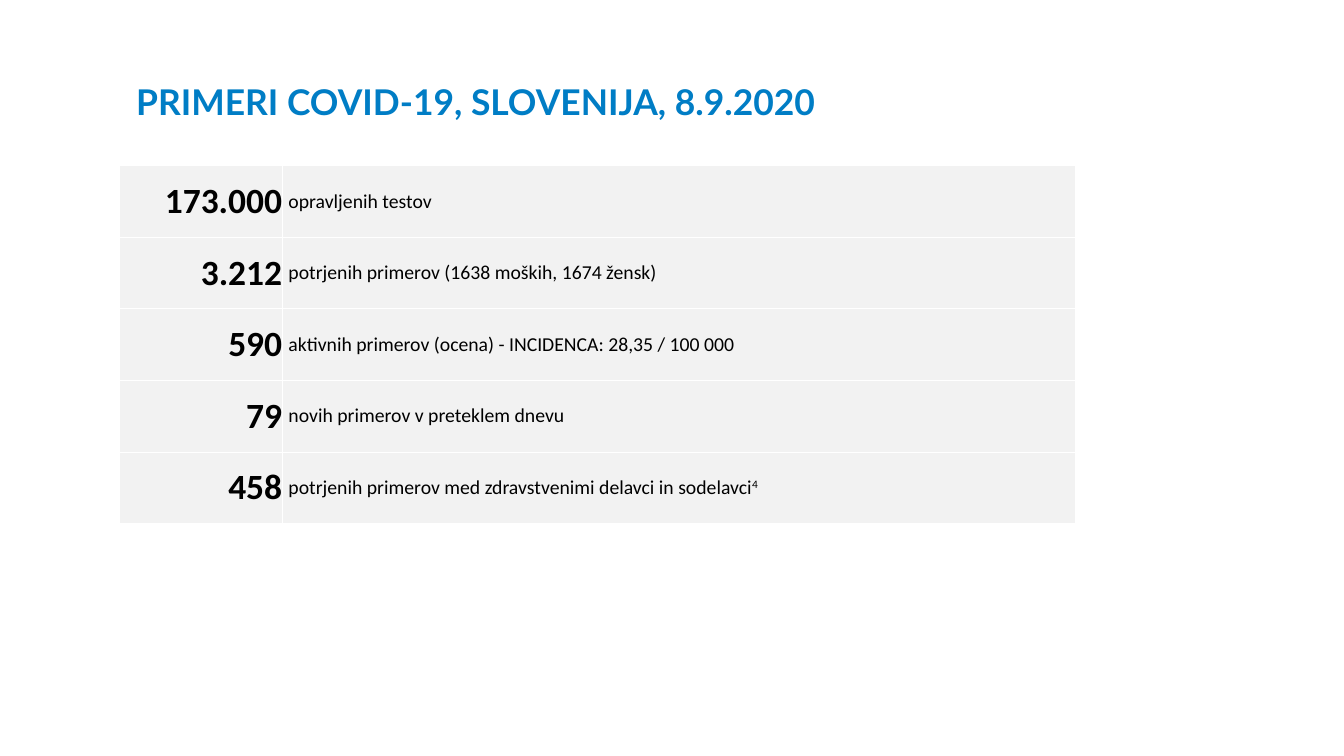
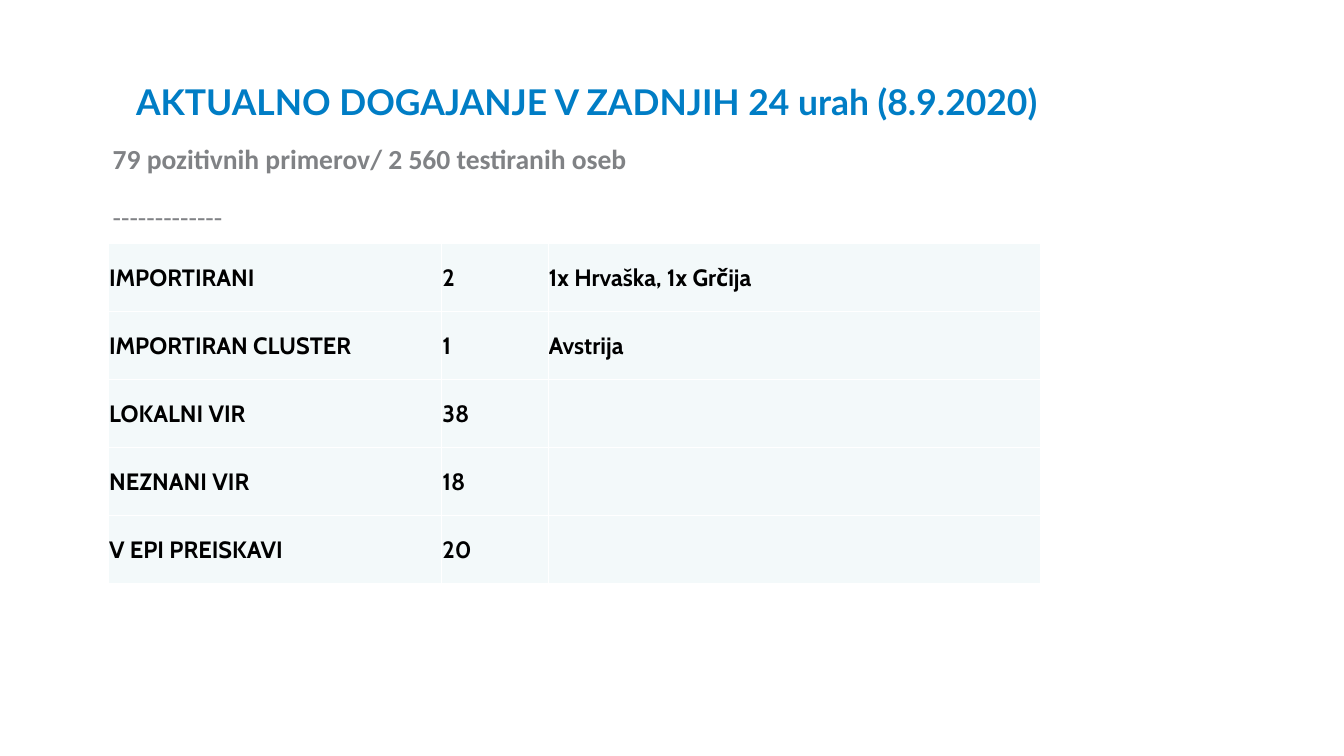
from lxml import etree
from pptx import Presentation
from pptx.dml.color import RGBColor
from pptx.enum.text import MSO_ANCHOR, MSO_AUTO_SIZE, PP_ALIGN
from pptx.oxml import parse_xml
from pptx.oxml.ns import nsdecls, qn
from pptx.util import Inches, Pt

BLUE, GREY, BLACK, WHITE = "007DC5", "808285", "000000", "FFFFFF"
TITLE_FONT = {"name": "Lato", "size": Pt(36), "bold": True}
SUMMARY_FONT = {"name": "Calibri", "size": Pt(28), "bold": True}
FRAME_FORMAT = {
    "margin_left": Inches(0.06), "margin_right": Inches(0.06),
    "margin_top": Inches(0.06), "margin_bottom": Inches(0.06),
    "word_wrap": True, "auto_size": MSO_AUTO_SIZE.NONE,
}
COUNT_COLUMN = {
    "width": 2.29, "align": PP_ALIGN.RIGHT, "insets": (0, 0, 0, 0),
    "font": {"name": "Calibri", "size": Pt(36), "bold": True},
}
LABEL_COLUMN = {
    "width": 11.19, "align": PP_ALIGN.LEFT, "insets": (0.09, 0, 0, 0),
    "font": {"name": "Calibri", "size": Pt(20), "bold": False},
}
SOURCE_COLUMN = {
    "align": PP_ALIGN.LEFT, "insets": (0.01, 0.01, 0.01, 0),
    "font": {"name": "Cabin", "size": Pt(24), "bold": True},
}
FOOTNOTE_MARK = "4"

SLIDES = [
    {
        "layout": 5,
        "title": "PRIMERI COVID-19, SLOVENIJA, 8.9.2020",
        "summary": [],
        "left": 1.69, "top": 2.34, "row_height": 1.01, "fill": "F2F2F2",
        "columns": [COUNT_COLUMN, LABEL_COLUMN],
        "rows": [
            ("173.000", "opravljenih testov"),
            ("3.212", "potrjenih primerov (1638 moških, 1674 žensk)"),
            ("590", "aktivnih primerov (ocena) - INCIDENCA: 28,35 / 100 000"),
            ("79", "novih primerov v preteklem dnevu"),
            ("458", "potrjenih primerov med zdravstvenimi delavci in sodelavci"),
        ],
    },
    {
        "layout": 1,
        "title": "AKTUALNO DOGAJANJE V ZADNJIH 24 urah (8.9.2020)",
        "summary": ["79 pozitivnih primerov/ 2 560 testiranih oseb", "-------------"],
        "left": 1.53, "top": 3.44, "row_height": 0.96, "fill": "F3F9FA",
        "columns": [{"width": width, **SOURCE_COLUMN} for width in (4.7, 1.5, 6.95)],
        "rows": [
            ("IMPORTIRANI", "2", "1x Hrvaška, 1x Grčija"),
            ("IMPORTIRAN CLUSTER", "1", "Avstrija"),
            ("LOKALNI VIR", "38", ""),
            ("NEZNANI VIR", "18", ""),
            ("V EPI PREISKAVI", "20", ""),
        ],
    },
]


def apply_format(target, values, color=None):
    """Set each named attribute and, for a font, its colour."""
    for attribute, value in values.items():
        setattr(target, attribute, value)
    if color:
        target.color.rgb = RGBColor.from_string(color)


def add_borders(cell, color):
    properties = cell._tc.get_or_add_tcPr()
    for position, side in enumerate(("lnL", "lnR", "lnT", "lnB")):
        properties.insert(position, parse_xml(
            f'<a:{side} {nsdecls("a")} w="12700"><a:solidFill>'
            f'<a:srgbClr val="{color}"/></a:solidFill></a:{side}>'))


deck = Presentation()
deck.slide_width, deck.slide_height = Inches(18.96), Inches(10.67)

for content in SLIDES:
    slide = deck.slides.add_slide(deck.slide_layouts[content["layout"]])

    title = slide.shapes.title
    title.left, title.top = Inches(1.86), Inches(0.53)
    title.width, title.height = Inches(15.26), Inches(1.26)
    title.text_frame.text = content["title"]
    apply_format(title.text_frame, FRAME_FORMAT)
    title.text_frame.vertical_anchor = MSO_ANCHOR.BOTTOM
    heading = title.text_frame.paragraphs[0]
    heading.alignment = PP_ALIGN.LEFT
    apply_format(heading.font, TITLE_FONT, BLUE)

    if content["summary"]:
        summary = slide.placeholders[1]
        summary.left, summary.top = Inches(1.53), Inches(1.95)
        summary.width, summary.height = Inches(14.88), Inches(8.27)
        summary.text_frame.text = "\n".join(content["summary"])
        apply_format(summary.text_frame, FRAME_FORMAT)
        for index, line in enumerate(summary.text_frame.paragraphs):
            line_properties = line._p.get_or_add_pPr()
            line_properties.set("marL", "0")
            line_properties.set("indent", "0")
            etree.SubElement(line_properties, qn("a:buNone"))
            line.space_before = Pt(25 * index)
            apply_format(line.font, {**SUMMARY_FONT, "bold": index == 0}, GREY)

    rows, columns = content["rows"], content["columns"]
    table = slide.shapes.add_table(
        len(rows), len(columns), Inches(content["left"]), Inches(content["top"]),
        Inches(sum(column["width"] for column in columns)),
        Inches(content["row_height"] * len(rows))).table
    apply_format(table, {"first_row": False, "horz_banding": False})

    for column_index, column in enumerate(columns):
        table.columns[column_index].width = Inches(column["width"])
        left, top, right, bottom = (Inches(inset) for inset in column["insets"])
        cell_format = {
            "margin_left": left, "margin_top": top, "margin_right": right,
            "margin_bottom": bottom, "vertical_anchor": MSO_ANCHOR.MIDDLE,
        }
        for row_index, row in enumerate(rows):
            cell = table.cell(row_index, column_index)
            apply_format(cell, cell_format)
            cell.fill.solid()
            cell.fill.fore_color.rgb = RGBColor.from_string(content["fill"])
            add_borders(cell, WHITE)
            cell.text = row[column_index]
            entry = cell.text_frame.paragraphs[0]
            entry.alignment = column["align"]
            if column is LABEL_COLUMN and row is rows[-1]:
                mark = entry.add_run()
                mark.text = FOOTNOTE_MARK
                mark._r.get_or_add_rPr().set("baseline", "30000")
            for run in entry.runs:
                apply_format(run.font, column["font"], BLACK)

    for table_row in table.rows:
        table_row.height = Inches(content["row_height"])

deck.save("out.pptx")
